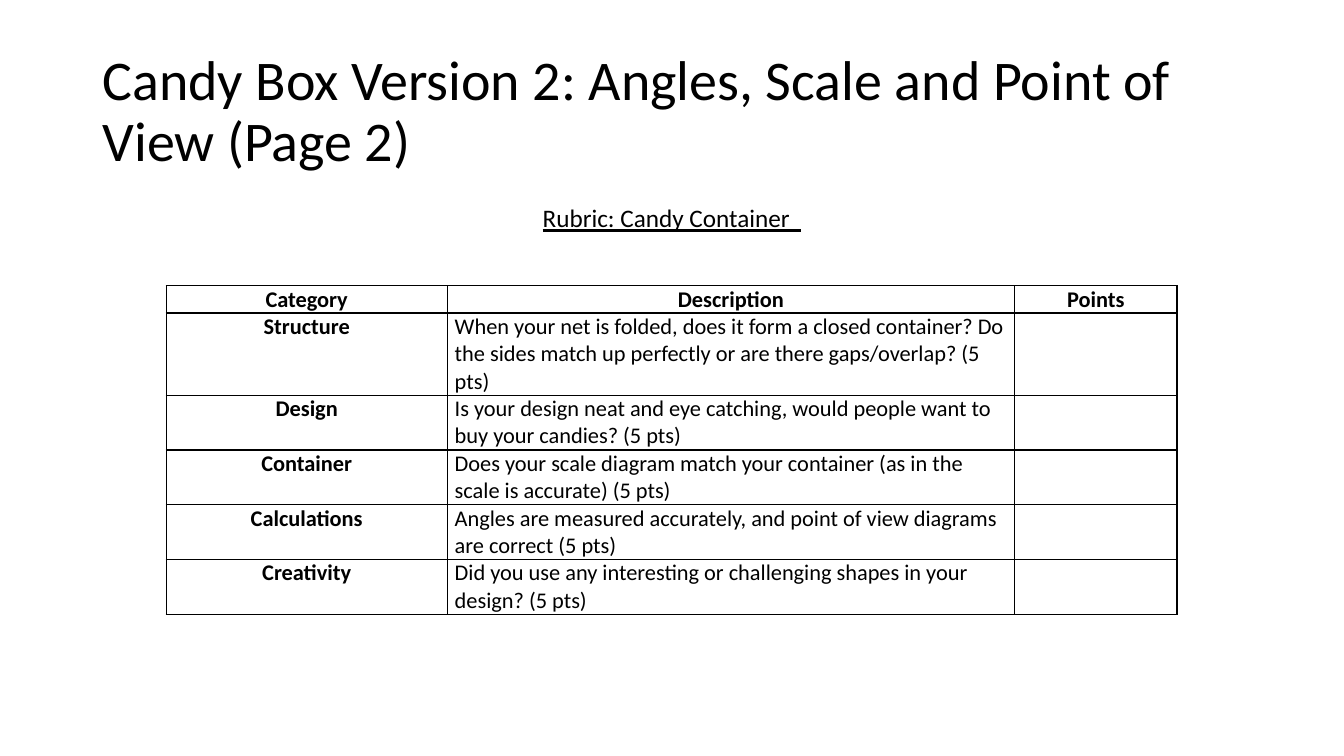
"""Build the candy box rubric slide."""
from typing import NamedTuple

from lxml.etree import SubElement
from pptx import Presentation
from pptx.dml.color import RGBColor
from pptx.enum.text import MSO_ANCHOR as Anchor, MSO_AUTO_SIZE as AutoSize, PP_ALIGN as Align
from pptx.oxml.ns import qn
from pptx.util import Cm, Pt

BLACK = RGBColor(0x00, 0x00, 0x00)
WHITE = RGBColor(0xFF, 0xFF, 0xFF)
FONT = "Calibri"
LINE_HEIGHT = 0.69
COLUMN_WIDTHS = (7.08, 14.3, 4.09)


class Criterion(NamedTuple):
    category: str
    description: str
    points: str = ""
    lines: int = 2


RUBRIC = (
    Criterion("Category", "Description", "Points", lines=1),
    Criterion("Structure", "When your net is folded, does it form a closed container? "
              "Do the sides match up perfectly or are there gaps/overlap? (5 pts)", lines=3),
    Criterion("Design", "Is your design neat and eye catching, "
              "would people want to buy your candies? (5 pts)"),
    Criterion("Container", "Does your scale diagram match your container "
              "(as in the scale is accurate) (5 pts)"),
    Criterion("Calculations", "Angles are measured accurately, "
              "and point of view diagrams are correct (5 pts)"),
    Criterion("Creativity", "Did you use any interesting or challenging shapes "
              "in your design? (5 pts)"),
)


def write(frame, text: str, size: int, align: Align, bold: bool = False):
    """Put one formatted paragraph in a text frame and return it."""
    frame.word_wrap = True
    paragraph = frame.paragraphs[0]
    paragraph.text = text
    paragraph.alignment = align
    font = paragraph.font
    font.name, font.size, font.bold = FONT, Pt(size), bold
    font.color.rgb = BLACK
    return paragraph


def add_borders(cell) -> None:
    """Draw a thin black line on every side of a cell."""
    properties = cell._tc.get_or_add_tcPr()
    for position, side in enumerate(("lnL", "lnR", "lnT", "lnB")):
        line = SubElement(properties, qn(f"a:{side}"), w=str(Pt(1)))
        fill = SubElement(line, qn("a:solidFill"))
        SubElement(fill, qn("a:srgbClr"), val=str(BLACK))
        properties.insert(position, line)


def add_title(slide) -> None:
    """Place and format the slide title."""
    title = slide.shapes.title
    title.left, title.top, title.width, title.height = Cm(2.33), Cm(1.01), Cm(29.21), Cm(3.68)
    frame = title.text_frame
    frame.auto_size = AutoSize.NONE
    frame.vertical_anchor = Anchor.MIDDLE
    write(frame, "Candy Box Version 2: Angles, Scale and Point of View (Page 2)",
          40, Align.LEFT).line_spacing = 0.9


def add_heading(slide) -> None:
    """Add the underlined heading above the rubric."""
    box = slide.shapes.add_textbox(Cm(2.33), Cm(5.07), Cm(29.21), Cm(12.09))
    heading = write(box.text_frame, "Rubric: Candy Container  ", 18, Align.CENTER)
    heading.line_spacing = 0.9
    heading.font.underline = True


def add_rubric(slide) -> None:
    """Add the rubric table."""
    height = LINE_HEIGHT * sum(criterion.lines for criterion in RUBRIC)
    rubric = slide.shapes.add_table(len(RUBRIC), len(COLUMN_WIDTHS), Cm(4.19), Cm(7.2),
                                    Cm(sum(COLUMN_WIDTHS)), Cm(height)).table
    rubric.first_row = rubric.horz_banding = False
    for column, width in zip(rubric.columns, COLUMN_WIDTHS):
        column.width = Cm(width)
    for row_index, (row, criterion) in enumerate(zip(rubric.rows, RUBRIC)):
        row.height = Cm(LINE_HEIGHT * criterion.lines)
        texts = (criterion.category, criterion.description, criterion.points)
        for column_index, (cell, text) in enumerate(zip(row.cells, texts)):
            is_heading = row_index == 0 or column_index == 0
            cell.margin_left = cell.margin_right = Cm(0.19)
            cell.margin_top = cell.margin_bottom = 0
            cell.fill.solid()
            cell.fill.fore_color.rgb = WHITE
            write(cell.text_frame, text, 16, Align.CENTER if is_heading else Align.LEFT, is_heading)
            add_borders(cell)


def main() -> None:
    """Build and save the presentation."""
    deck = Presentation()
    deck.slide_width, deck.slide_height = Cm(33.87), Cm(19.05)
    slide = deck.slides.add_slide(deck.slide_layouts.get_by_name("Title Only"))
    add_title(slide)
    add_heading(slide)
    add_rubric(slide)
    deck.save("out.pptx")


if __name__ == "__main__":
    main()
